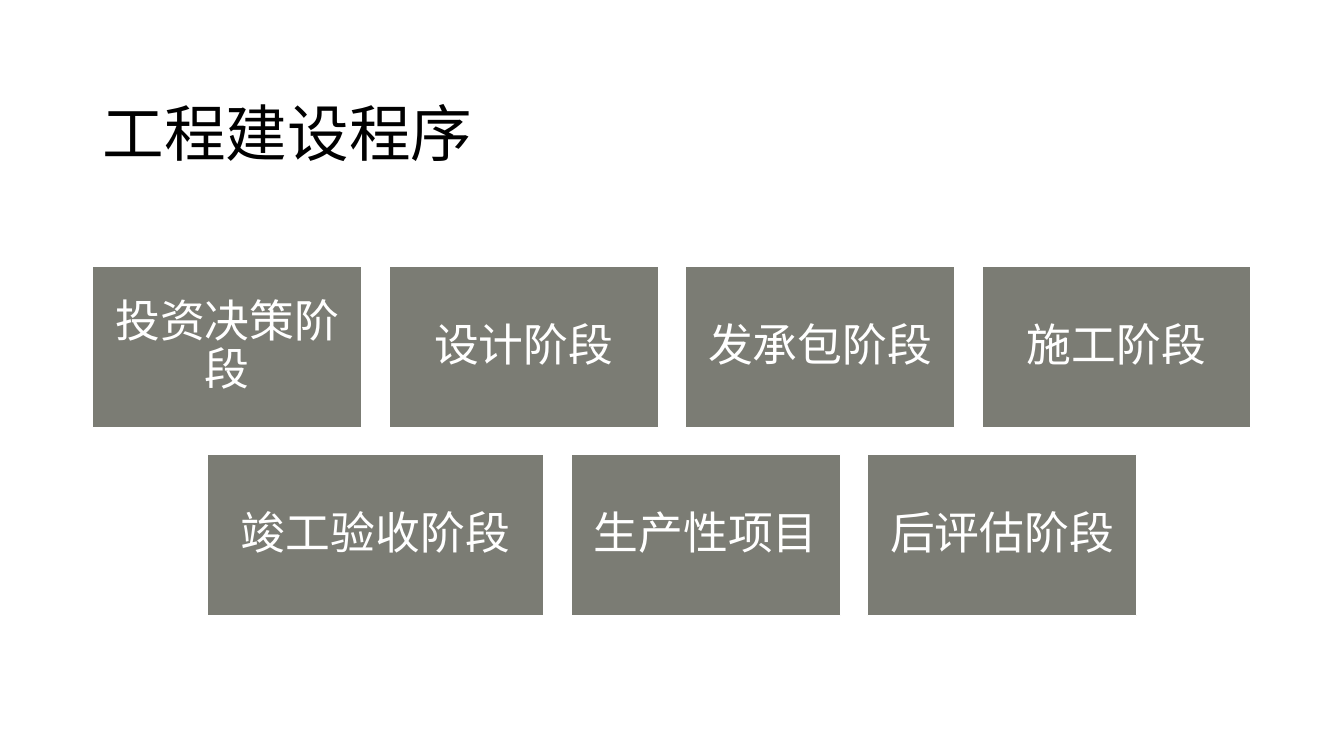
from lxml import etree
from pptx import Presentation
from pptx import util as u
from pptx.dml.color import RGBColor
from pptx.enum import shapes, text
from pptx.oxml import ns

COLORS = {"ink": "000000", "box": "7B7C74", "white": "FFFFFF"}
CJK_FONT = "Noto Sans CJK SC"
SLIDE_WIDTH, SLIDE_HEIGHT = 13.33, 7.5
GAP = 0.27
STAGE_HEIGHT = 1.6
FIRST_ROW_TOP = 2.64
STAGE_ROWS = [
    [("投资决策阶段", 2.67), ("设计阶段", 2.67), ("发承包阶段", 2.67), ("施工阶段", 2.67)],
    [("竣工验收阶段", 3.34), ("生产性项目", 2.67), ("后评估阶段", 2.67)],
]
TITLE_FRAME = {"word_wrap": True, "vertical_anchor": text.MSO_ANCHOR.MIDDLE}
STAGE_FRAME = TITLE_FRAME | {
    f"margin_{side}": u.Inches(0.13) for side in ("left", "top", "right", "bottom")
}
TITLE_PARAGRAPH = {"alignment": text.PP_ALIGN.LEFT, "line_spacing": 1.5}
STAGE_PARAGRAPH = {"alignment": text.PP_ALIGN.CENTER, "line_spacing": 0.9}
TITLE_FONT = {"size": u.Pt(44), "name": "Times New Roman"}
STAGE_FONT = {"size": u.Pt(32), "name": CJK_FONT}


def rgb(name):
    """Return the named colour."""
    return RGBColor.from_string(COLORS[name])


def apply_format(target, values):
    """Set each attribute in values on the target."""
    for attribute, value in values.items():
        setattr(target, attribute, value)


def write_text(frame, wording, color, frame_format, paragraph_format, font_format):
    """Write one formatted paragraph into a text frame."""
    apply_format(frame, frame_format)
    paragraph = frame.paragraphs[0]
    apply_format(paragraph, paragraph_format)
    run = paragraph.add_run()
    run.text = wording
    run.font.color.rgb = rgb(color)
    apply_format(run.font, font_format)
    east_asian = etree.SubElement(run.font._element, ns.qn("a:ea"))
    east_asian.set("typeface", CJK_FONT)


def add_title(slide, wording):
    """Add the slide heading."""
    heading = slide.shapes.add_textbox(
        u.Inches(0.92), u.Inches(0.4), u.Inches(11.5), u.Inches(1.45)
    )
    write_text(heading.text_frame, wording, "ink", TITLE_FRAME, TITLE_PARAGRAPH, TITLE_FONT)


def add_stage(slide, wording, left, top, width):
    """Add one construction stage box."""
    stage = slide.shapes.add_shape(
        shapes.MSO_SHAPE.RECTANGLE,
        u.Inches(left), u.Inches(top), u.Inches(width), u.Inches(STAGE_HEIGHT),
    )
    stage.shadow.inherit = False
    stage.fill.solid()
    stage.fill.fore_color.rgb = rgb("box")
    stage.line.color.rgb = rgb("white")
    stage.line.width = u.Pt(1)
    write_text(stage.text_frame, wording, "white", STAGE_FRAME, STAGE_PARAGRAPH, STAGE_FONT)


def add_stage_row(slide, stages, top):
    """Add a row of stages centred on the slide."""
    row_width = sum(width for _, width in stages) + GAP * (len(stages) - 1)
    left = (SLIDE_WIDTH - row_width) / 2
    for wording, width in stages:
        add_stage(slide, wording, left, top, width)
        left += width + GAP


def main():
    """Build and save the slide."""
    deck = Presentation()
    deck.slide_width = u.Inches(SLIDE_WIDTH)
    deck.slide_height = u.Inches(SLIDE_HEIGHT)
    slide = deck.slides.add_slide(deck.slide_layouts[6])
    add_title(slide, "工程建设程序")
    for index, stages in enumerate(STAGE_ROWS):
        add_stage_row(slide, stages, FIRST_ROW_TOP + index * (STAGE_HEIGHT + GAP))
    deck.save("out.pptx")


if __name__ == "__main__":
    main()
